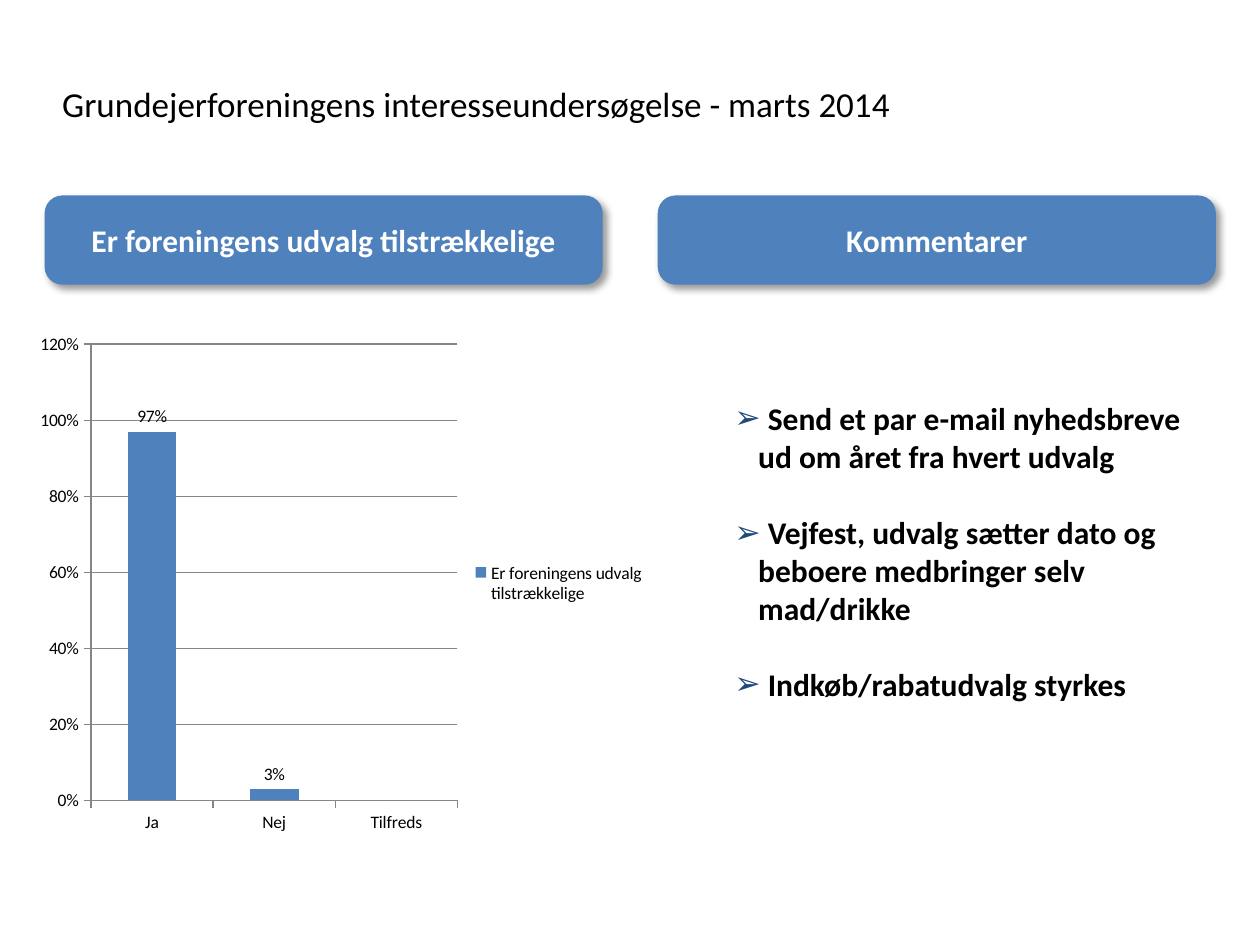
from lxml import etree
from pptx import Presentation
from pptx import util as u
from pptx.chart.data import CategoryChartData
from pptx.dml.color import RGBColor
from pptx.enum import chart as ch, shapes, text
from pptx.oxml import parse_xml
from pptx.oxml.ns import nsdecls, qn

BLUE, NAVY, GREY, BLACK, WHITE = "4F81BD", "1F497D", "868686", "000000", "FFFFFF"
QUESTION = "Er foreningens udvalg tilstrækkelige"


def style(font, size, color, bold=False):
    font.name = "Calibri"
    font.size = u.Pt(size)
    font.bold = bold
    font.color.rgb = RGBColor.from_string(color)


prs = Presentation()
prs.slide_width, prs.slide_height = u.Cm(25.4), u.Cm(19.05)
slide = prs.slides.add_slide(prs.slide_layouts[1])

# Title
title = slide.shapes.title
title.left, title.top, title.width, title.height = u.Cm(1), u.Cm(0.95), u.Cm(21.7), u.Cm(2.28)
title.text_frame.text = "Grundejerforeningens interesseundersøgelse - marts 2014"
title.text_frame.vertical_anchor = text.MSO_ANCHOR.MIDDLE
heading = title.text_frame.paragraphs[0]
heading.alignment = text.PP_ALIGN.LEFT
style(heading.font, 20, BLACK)

# Comments
comments = slide.placeholders[1]
comments.left, comments.top, comments.width, comments.height = u.Cm(14.55), u.Cm(7.92), u.Cm(9.96), u.Cm(6.4)
frame = comments.text_frame
frame.text = "\n".join([
    " Send et par e-mail nyhedsbreve ud om året fra hvert udvalg",
    " Vejfest, udvalg sætter dato og beboere medbringer selv mad/drikke",
    " Indkøb/rabatudvalg styrkes",
])
frame.auto_size = text.MSO_AUTO_SIZE.NONE
for comment in frame.paragraphs:
    style(comment.font, 18, BLACK, bold=True)
    comment.space_before, comment.space_after = u.Pt(0), u.Pt(22)
    props = comment._p.get_or_add_pPr()
    props.set("marL", str(u.Cm(0.48)))
    props.set("indent", str(u.Cm(-0.48)))
    bullet_color = parse_xml(f'<a:buClr {nsdecls("a")}><a:srgbClr val="{NAVY}"/></a:buClr>')
    bullet = parse_xml(f'<a:buChar {nsdecls("a")} char="➢"/>')
    props.find(qn("a:defRPr")).addprevious(bullet_color)
    bullet_color.addnext(bullet)

# Column headers
for left, label in [(0.9, QUESTION), (13.26, "Kommentarer")]:
    header = slide.shapes.add_shape(
        shapes.MSO_SHAPE.ROUNDED_RECTANGLE, u.Cm(left), u.Cm(3.94), u.Cm(11.25), u.Cm(1.8))
    header.adjustments[0] = 0.2
    header.fill.solid()
    header.fill.fore_color.rgb = RGBColor.from_string(BLUE)
    header.line.fill.background()
    header.shadow.inherit = False
    shadow = etree.SubElement(
        header._element.spPr.find(qn("a:effectLst")), qn("a:outerShdw"),
        blurRad=str(u.Pt(4)), dist=str(u.Pt(3)), dir="2700000", rotWithShape="0")
    shade = etree.SubElement(shadow, qn("a:srgbClr"), val=BLACK)
    etree.SubElement(shade, qn("a:alpha"), val="40000")
    frame = header.text_frame
    frame.margin_left = frame.margin_right = frame.margin_top = frame.margin_bottom = u.Cm(0.1)
    frame.vertical_anchor = text.MSO_ANCHOR.MIDDLE
    frame.text = label
    frame.paragraphs[0].alignment = text.PP_ALIGN.CENTER
    style(frame.paragraphs[0].font, 18, WHITE, bold=True)

# Answers
answers = CategoryChartData(number_format="0%")
answers.categories = ["Ja", "Nej", "Tilfreds"]
answers.add_series(QUESTION, [0.97, 0.03, None])
chart = slide.shapes.add_chart(
    ch.XL_CHART_TYPE.COLUMN_CLUSTERED, u.Cm(0.56), u.Cm(6.53), u.Cm(12.7), u.Cm(10.46), answers).chart
style(chart.font, 10, BLACK)
chart.has_title = False
chart.has_legend = True
chart.legend.position = ch.XL_LEGEND_POSITION.RIGHT
chart.legend.include_in_layout = False

share_axis = chart.value_axis
share_axis.minimum_scale, share_axis.maximum_scale, share_axis.major_unit = 0, 1.2, 0.2
share_axis.tick_labels.number_format = "0%"
share_axis.tick_labels.number_format_is_linked = False
share_axis.has_major_gridlines = True
for axis in (chart.category_axis, share_axis):
    axis.major_tick_mark = ch.XL_TICK_MARK.OUTSIDE
for line in (chart.category_axis.format.line, share_axis.format.line, share_axis.major_gridlines.format.line):
    line.color.rgb = RGBColor.from_string(GREY)
    line.width = u.Pt(0.75)

plot = chart.plots[0]
plot.gap_width = 150
plot.vary_by_categories = False
bars = plot.series[0]
bars.format.fill.solid()
bars.format.fill.fore_color.rgb = RGBColor.from_string(BLUE)
labels = bars.data_labels
labels.show_value = True
labels.number_format = "0%"
labels.number_format_is_linked = False
labels.position = ch.XL_LABEL_POSITION.OUTSIDE_END

prs.save("out.pptx")
